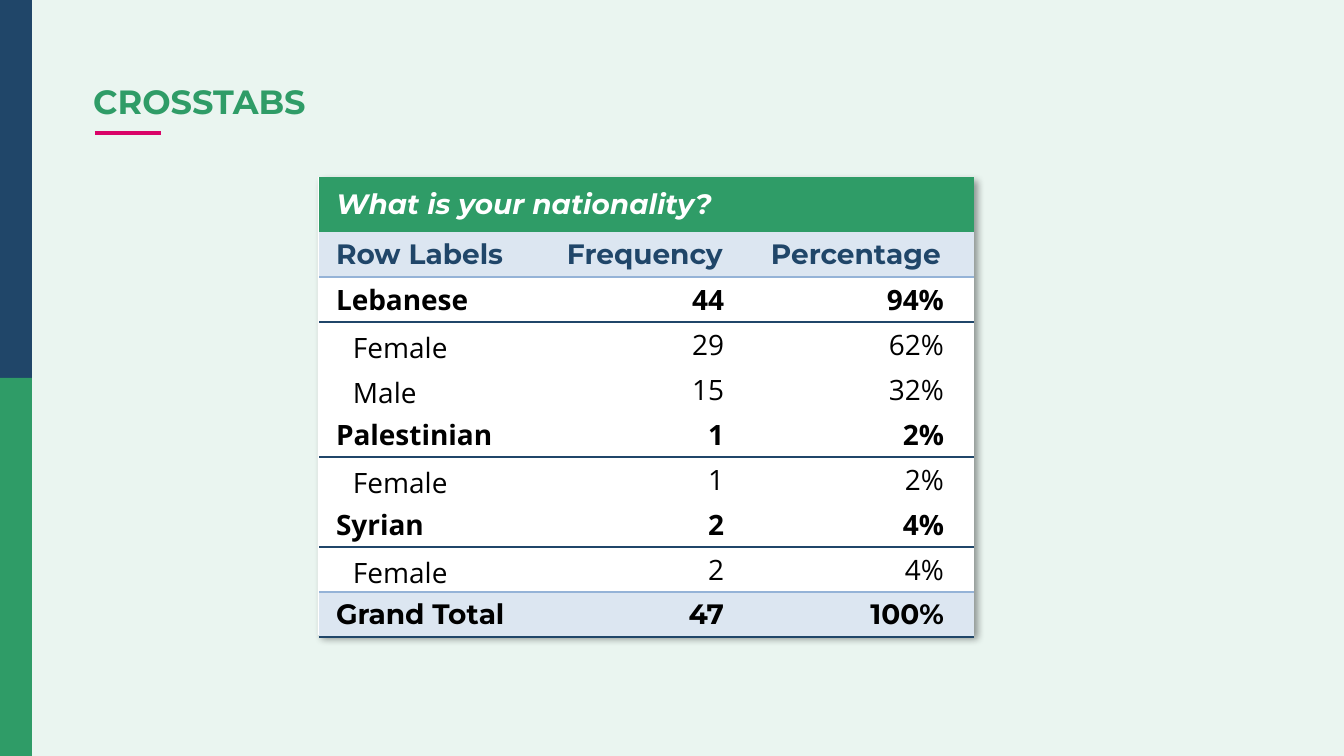
"""Builds the crosstabs slide."""
from lxml import etree
from pptx import Presentation
from pptx.dml.color import RGBColor
from pptx.enum.shapes import MSO_CONNECTOR, MSO_SHAPE
from pptx.enum.text import MSO_ANCHOR, PP_ALIGN
from pptx.oxml import parse_xml
from pptx.oxml.ns import nsdecls, qn
from pptx.util import Pt

RECT, LINE = MSO_SHAPE.RECTANGLE, MSO_CONNECTOR.STRAIGHT
MIDDLE, BOTTOM = MSO_ANCHOR.MIDDLE, MSO_ANCHOR.BOTTOM
LEFT, RIGHT = PP_ALIGN.LEFT, PP_ALIGN.RIGHT
WIDE, HIGH = 1344, 756
SCALE = 9144000 / WIDE
HEAD, BODY = "Montserrat", "Open Sans"
PLAIN = "{2D5ABB26-0587-4C30-8999-92F81FD0307C}"
COLORS = {
    "back": "EAF5F0", "green": "2F9C67", "navy": "204669", "pink": "D90368",
    "white": "FFFFFF", "black": "000000", "pale": "DCE6F1", "blue": "95B3D7",
}
COLS = (231, 204, 220)
TOP, ROW = 55, 45
ROWS = [
    ("title", "What is your nationality?", "", ""),
    ("label", "Row Labels", "Frequency", "Percentage"),
    ("group", "Lebanese", "44", "94%"),
    ("item", "Female", "29", "62%"),
    ("item", "Male", "15", "32%"),
    ("group", "Palestinian", "1", "2%"),
    ("item", "Female", "1", "2%"),
    ("group", "Syrian", "2", "4%"),
    ("last", "Female", "2", "4%"),
    ("total", "Grand Total", "47", "100%"),
]
STYLES = {
    "title": (HEAD, "white", True, "green", None),
    "label": (HEAD, "navy", True, "pale", "blue"),
    "group": (BODY, "black", True, None, "navy"),
    "item": (BODY, "black", False, None, None),
    "last": (BODY, "black", False, None, "blue"),
    "total": (HEAD, "black", True, "pale", "navy"),
}


def emu(px):
    """Turn px into EMU."""
    return round(px * SCALE)


def rgb(name):
    """Look up a colour by name."""
    return RGBColor.from_string(COLORS[name])


def set_font(para, face, size, color, bold, slant=False):
    """Set the font of a paragraph."""
    font = para.font
    font.name, font.size, font.bold, font.italic = face, Pt(size), bold, slant
    font.color.rgb = rgb(color)


def add_rect(slide, box, color):
    """Add a plain filled rectangle."""
    rect = slide.shapes.add_shape(RECT, *map(emu, box))
    rect.shadow.inherit = False
    rect.fill.solid()
    rect.fill.fore_color.rgb = rgb(color)
    rect.line.fill.background()
    return rect


def add_side(slide, box):
    """Add the two-part side band."""
    x, y, w, h = box
    half = h // 2
    for i, color in enumerate(("navy", "green")):
        add_rect(slide, (x, y + i * half, w, half), color)


def add_title(slide, box, text):
    """Add the slide title and the line under it."""
    x, y, w, h = box
    frame = slide.shapes.add_textbox(*map(emu, box)).text_frame
    frame.word_wrap = True
    frame.margin_left = 0
    para = frame.paragraphs[0]
    para.text, para.line_spacing = text, 0.9
    set_font(para, HEAD, 18, "green", True)
    ends = x + 2, y + h + 4, x + 68, y + h + 4
    rule = slide.shapes.add_connector(LINE, *map(emu, ends))
    rule.line.color.rgb, rule.line.width = rgb("pink"), Pt(2.25)
    etree.SubElement(rule._element.spPr, qn("a:effectLst"))


def add_card(slide, box):
    """Add the white card with its soft shadow."""
    card = add_rect(slide, box, "white")
    props = card._element.spPr
    props.remove(props.find(qn("a:effectLst")))
    props.append(parse_xml(
        f'<a:effectLst {nsdecls("a")}><a:outerShdw blurRad="{Pt(4)}" '
        f'dist="{Pt(3)}" dir="2700000" algn="tl" rotWithShape="0">'
        f'<a:srgbClr val="{COLORS["black"]}"><a:alpha val="40000"/>'
        '</a:srgbClr></a:outerShdw></a:effectLst>'))


def fill_cell(cell, text, kind, col):
    """Write and style one table cell."""
    face, color, bold, fill, edge = STYLES[kind]
    child = kind in ("item", "last") and col == 0
    value = col > 0 and kind != "label"
    cell.margin_top = cell.margin_bottom = 0
    cell.margin_left = emu(17)
    cell.margin_right = emu(30 if value else 17)
    cell.vertical_anchor = BOTTOM if child else MIDDLE
    para = cell.text_frame.paragraphs[0]
    para.text, para.alignment = text, RIGHT if value else LEFT
    if child:
        para._p.get_or_add_pPr().set("marL", str(emu(17)))
    set_font(para, face, 15, color, bold, kind == "title")
    if fill:
        cell.fill.solid()
        cell.fill.fore_color.rgb = rgb(fill)
    else:
        cell.fill.background()
    if edge:
        cell._tc.get_or_add_tcPr().insert(0, parse_xml(
            f'<a:lnB {nsdecls("a")} w="{Pt(1)}"><a:solidFill>'
            f'<a:srgbClr val="{COLORS[edge]}"/></a:solidFill></a:lnB>'))


def add_cross(slide, box):
    """Add the crosstab on its card."""
    x, y, w, h = box
    add_card(slide, (x - 1, y, w + 1, h - 2))
    frame = slide.shapes.add_table(len(ROWS), len(COLS), *map(emu, box))
    table = frame.table
    table._tbl.tblPr.find(qn("a:tableStyleId")).text = PLAIN
    table.first_row = table.horz_banding = False
    for col, size in zip(table.columns, COLS):
        col.width = emu(size)
    for r, (kind, *texts) in enumerate(ROWS):
        table.rows[r].height = emu(ROW if r else TOP)
        for c, text in enumerate(texts):
            fill_cell(table.cell(r, c), text, kind, c)
    table.cell(0, 0).merge(table.cell(0, len(COLS) - 1))


def main():
    """Build and save the slide."""
    deck = Presentation()
    deck.slide_width, deck.slide_height = emu(WIDE), emu(HIGH)
    slide = deck.slides.add_slide(deck.slide_layouts[6])
    slide.background.fill.solid()
    slide.background.fill.fore_color.rgb = rgb("back")
    add_side(slide, (0, 0, 32, HIGH))
    add_title(slide, (93, 79, 1158, 50), "CROSSTABS")
    high = TOP + ROW * (len(ROWS) - 1)
    add_cross(slide, (319, 177, sum(COLS), high))
    deck.save("out.pptx")


if __name__ == "__main__":
    main()
